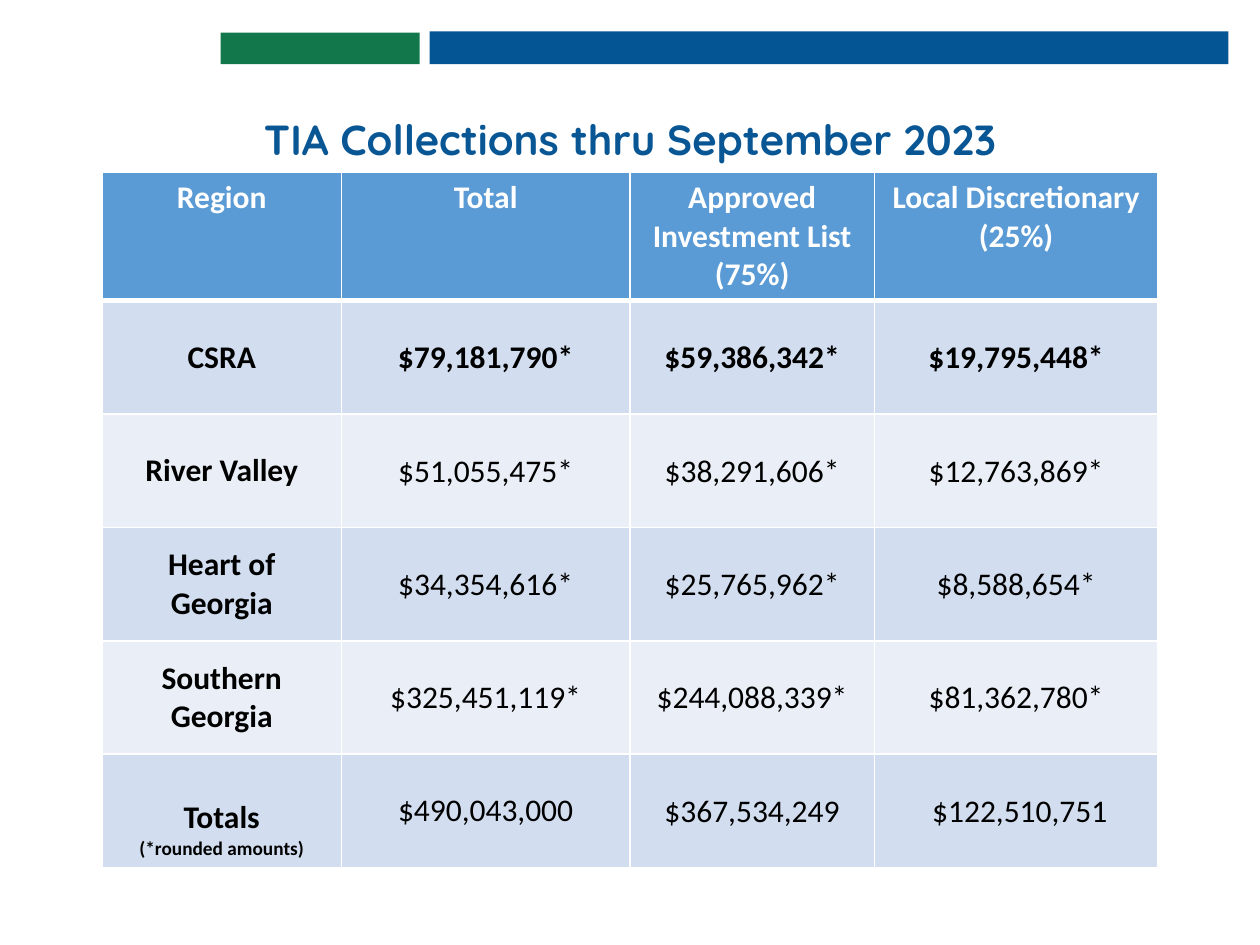
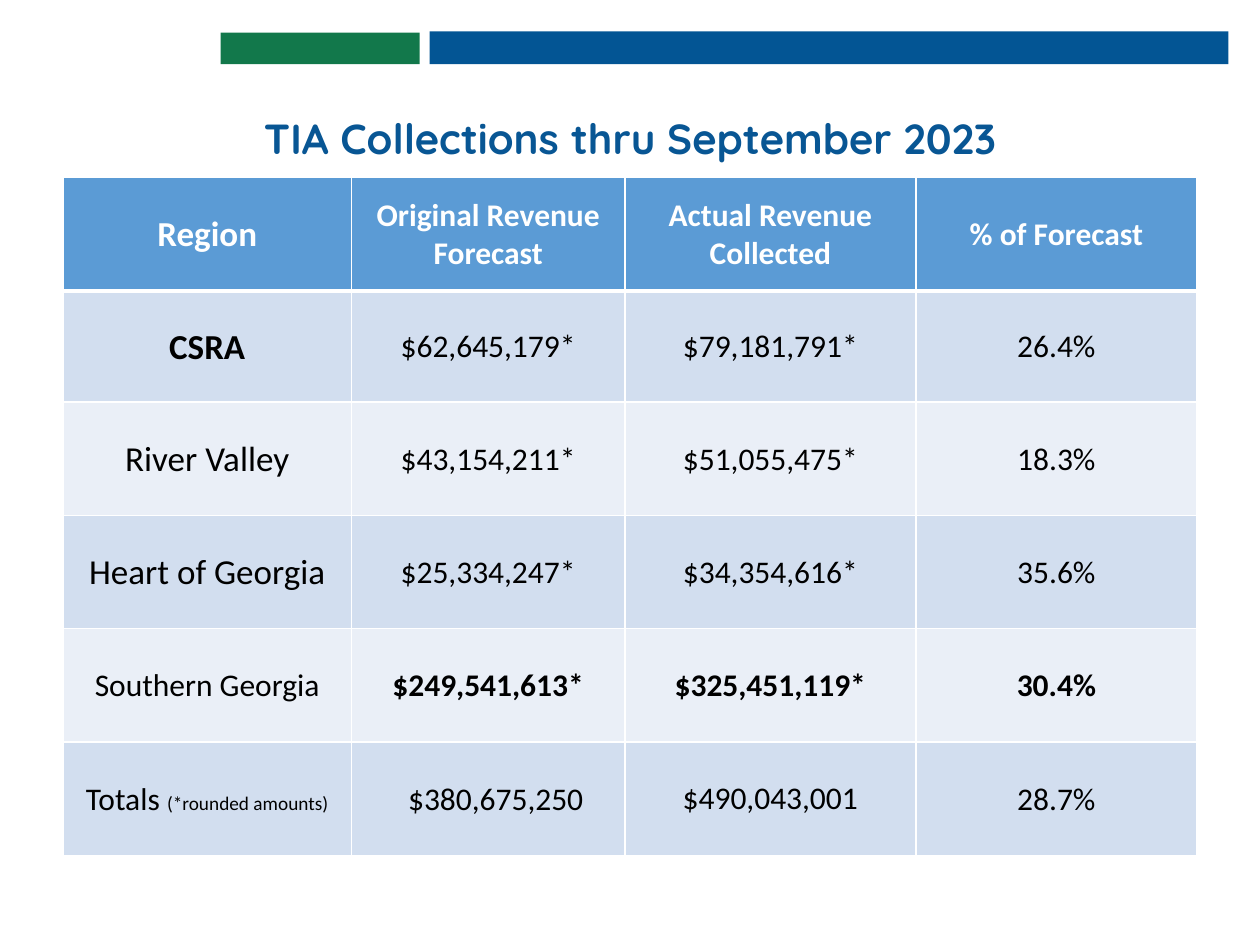
import pptx
import pptx.util
import pptx.dml.color
import pptx.enum.shapes
import pptx.enum.text
from lxml import etree

Inches, Pt = pptx.util.Inches, pptx.util.Pt
RGBColor = pptx.dml.color.RGBColor
PP_ALIGN = pptx.enum.text.PP_ALIGN
MSO_ANCHOR = pptx.enum.text.MSO_ANCHOR

# Shared style
WHITE = RGBColor(0xFF, 0xFF, 0xFF)
BLACK = RGBColor(0x00, 0x00, 0x00)
BAND_BLUE = RGBColor(0x03, 0x55, 0x94)
BAND_GREEN = RGBColor(0x12, 0x78, 0x4B)
TITLE_BLUE = RGBColor(0x08, 0x56, 0x94)
HEADER_BLUE = RGBColor(0x5B, 0x9B, 0xD5)
ROW_FILLS = [RGBColor(0xD2, 0xDE, 0xEF), RGBColor(0xEA, 0xEF, 0xF7)]
BANDS = [(3.41, 0.25, 6.34, 0.26, BAND_BLUE), (1.75, 0.26, 1.58, 0.25, BAND_GREEN)]
TITLE = "TIA Collections thru September 2023"
NOTE = "(*rounded amounts)"
TEXT_SIZE, LABEL_SIZE, NOTE_SIZE = 18, 20, 11
LOOSE = (0.1, 0.05, 0.1, 0.05)  # cell insets: left, top, right, bottom
TIGHT = (0.01, 0.01, 0.01, 0)

# Content: bold, large and insets are keyed by (row, column)
COLLECTIONS = {
    "title_top": 0.73, "at": (0.81, 1.37),
    "cols": [1.9, 2.29, 1.94, 2.25], "rows": [1] + [0.9] * 5,
    "cells": [
        ["Region", "Total", "Approved Investment List (75%)", "Local Discretionary (25%)"],
        ["CSRA", "$79,181,790*", "$59,386,342*", "$19,795,448*"],
        ["River Valley", "$51,055,475*", "$38,291,606*", "$12,763,869*"],
        ["Heart of Georgia", "$34,354,616*", "$25,765,962*", "$8,588,654*"],
        ["Southern Georgia", "$325,451,119*", "$244,088,339*", "$81,362,780*"],
        ["Totals\n" + NOTE, "$490,043,000", "$367,534,249", "$122,510,751"],
    ],
    "header_anchor": MSO_ANCHOR.TOP,
    "bold": {(r, 0) for r in range(1, 6)} | {(1, c) for c in range(4)},
    "large": set(),
    "insets": {(r, 0): LOOSE for r in range(1, 5)} | {(0, c): LOOSE for c in range(4)}
              | {(5, 0): (0.1, 0.35, 0.1, 0.05), (5, 1): LOOSE, (5, 3): (0.07, 0.01, 0.01, 0)},
}
FORECAST = {
    "title_top": 0.72, "at": (0.5, 1.41),
    "cols": [2.29, 2.17, 2.31, 2.23], "rows": [0.9, 0.88] + [0.9] * 4,
    "cells": [
        ["Region", "Original Revenue Forecast", "Actual Revenue Collected", "% of Forecast"],
        ["CSRA", "$62,645,179*", "$79,181,791*", "26.4%"],
        ["River Valley", "$43,154,211*", "$51,055,475*", "18.3%"],
        ["Heart of Georgia", "$25,334,247*", "$34,354,616*", "35.6%"],
        ["Southern Georgia", "$249,541,613*", "$325,451,119*", "30.4%"],
        ["Totals " + NOTE, "$380,675,250", "$490,043,001", "28.7%"],
    ],
    "header_anchor": MSO_ANCHOR.MIDDLE,
    "bold": {(1, 0), (4, 1), (4, 2), (4, 3)},
    "large": {(r, 0) for r in range(4)},
    "insets": {(5, 1): (0.13, 0.01, 0.01, 0), (5, 2): LOOSE},
}


def add_bands(slide):
    for x, y, w, h, color in BANDS:
        sp = slide.shapes.add_shape(pptx.enum.shapes.MSO_SHAPE.RECTANGLE,
                                    Inches(x), Inches(y), Inches(w), Inches(h))
        sp.shadow.inherit = False
        sp.fill.solid()
        sp.fill.fore_color.rgb = color
        sp.line.fill.background()


def set_title(slide, top, width):
    sp = slide.shapes.title
    sp.left, sp.top, sp.width, sp.height = 0, Inches(top), width, Inches(0.63)
    tf = sp.text_frame
    tf.text = TITLE
    tf.vertical_anchor = MSO_ANCHOR.BOTTOM
    p = tf.paragraphs[0]
    p.alignment = PP_ALIGN.CENTER
    p.line_spacing = 0.9
    style_font(p.runs[0].font, 24, TITLE_BLUE, True, "Quicksand")


def style_font(font, size, color, bold, name="Calibri"):
    font.name, font.size, font.bold = name, Pt(size), bold
    font.color.rgb = color


def set_borders(cell, bottom):
    tcPr = cell._tc.get_or_add_tcPr()
    for i, (side, width) in enumerate([("L", 1), ("R", 1), ("T", 1), ("B", bottom)]):
        ln = etree.Element(pptx.oxml.ns.qn("a:ln" + side), w=str(Pt(width)))
        fill = etree.SubElement(ln, pptx.oxml.ns.qn("a:solidFill"))
        etree.SubElement(fill, pptx.oxml.ns.qn("a:srgbClr"), val=str(WHITE))
        tcPr.insert(i, ln)


def fill_cell(cell, text, size, color, bold):
    cell.text_frame.text = text.replace(NOTE, "") if text.endswith(" " + NOTE) else text
    for p in cell.text_frame.paragraphs:
        p.alignment = PP_ALIGN.CENTER
        if text.endswith(" " + NOTE):
            p.add_run().text = NOTE
        for r in p.runs:
            style_font(r.font, NOTE_SIZE if r.text == NOTE else size, color, bold)


def add_region_table(slide, data):
    x, y = data["at"]
    cols, rows = data["cols"], data["rows"]
    table = slide.shapes.add_table(len(rows), len(cols), Inches(x), Inches(y),
                                   Inches(sum(cols)), Inches(sum(rows))).table
    for column, width in zip(table.columns, cols):
        column.width = Inches(width)
    for row, height in zip(table.rows, rows):
        row.height = Inches(height)
    for i, texts in enumerate(data["cells"]):
        header = i == 0
        for j, text in enumerate(texts):
            cell = table.cell(i, j)
            fill_cell(cell, text, LABEL_SIZE if (i, j) in data["large"] else TEXT_SIZE,
                      WHITE if header else BLACK, header or (i, j) in data["bold"])
            cell.fill.solid()
            cell.fill.fore_color.rgb = HEADER_BLUE if header else ROW_FILLS[(i - 1) % 2]
            cell.vertical_anchor = data["header_anchor"] if header else MSO_ANCHOR.MIDDLE
            insets = [Inches(v) for v in data["insets"].get((i, j), TIGHT)]
            cell.margin_left, cell.margin_top, cell.margin_right, cell.margin_bottom = insets
            # A heavier rule separates the header from the regions
            set_borders(cell, 3 if header else 1)
            if i == 1:
                cell._tc.tcPr.find(pptx.oxml.ns.qn("a:lnT")).set("w", str(Pt(3)))


def main():
    prs = pptx.Presentation()
    prs.slide_width, prs.slide_height = Inches(10), Inches(7.5)
    for data in (COLLECTIONS, FORECAST):
        slide = prs.slides.add_slide(prs.slide_layouts.get_by_name("Title Only"))
        add_bands(slide)
        set_title(slide, data["title_top"], prs.slide_width)
        add_region_table(slide, data)
    prs.save("out.pptx")


if __name__ == "__main__":
    main()
